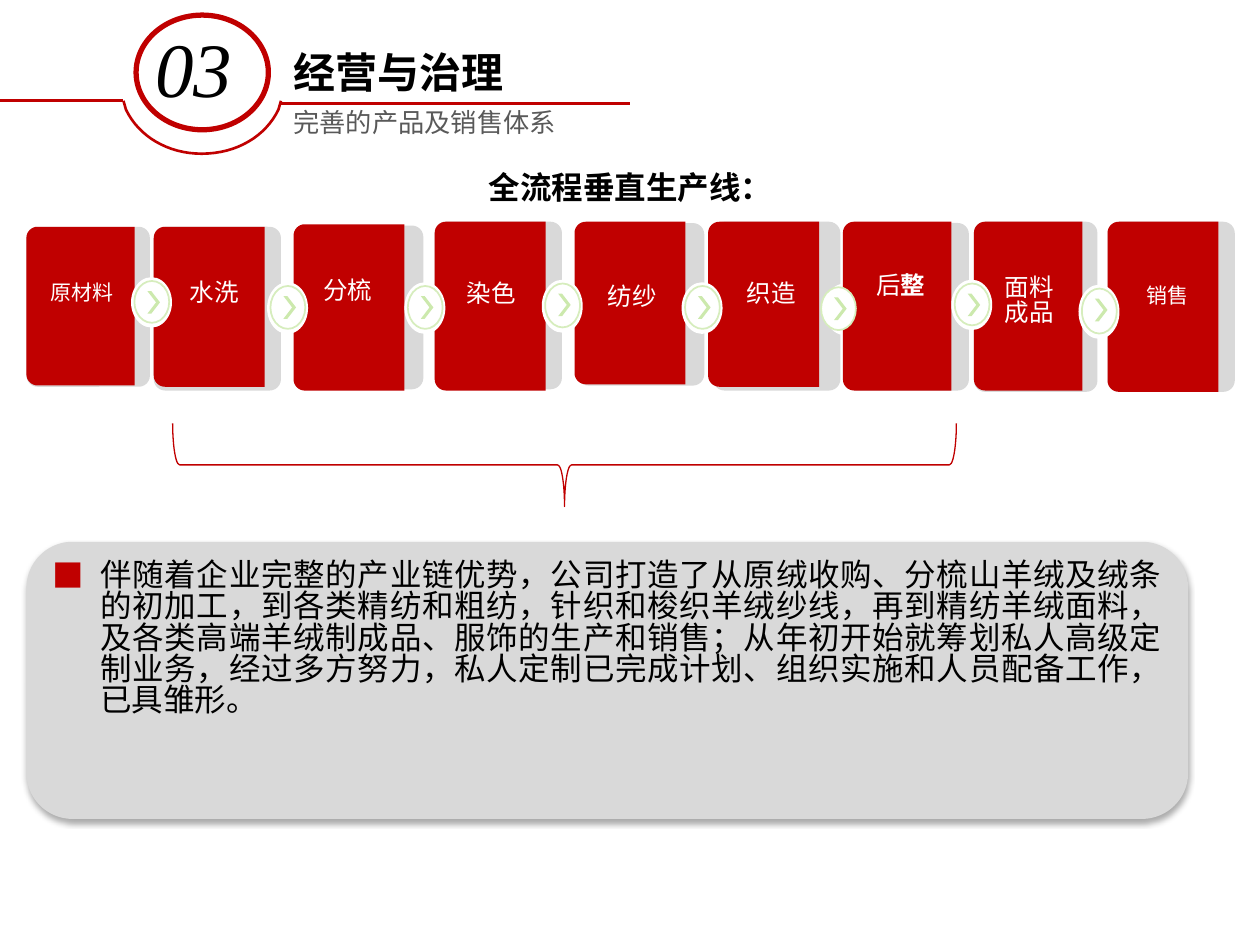
from collections import namedtuple
from dataclasses import dataclass
from lxml.etree import SubElement
from pptx import Presentation
from pptx.dml.color import RGBColor
from pptx.enum.shapes import MSO_CONNECTOR, MSO_SHAPE
from pptx.enum.text import MSO_ANCHOR, PP_ALIGN
from pptx.oxml.ns import qn
from pptx.util import Inches, Pt

Box = namedtuple("Box", "x y w h")
Stage = namedtuple("Stage", "back front label")


@dataclass(frozen=True)
class Theme:
    red: str = "C00000"
    grey: str = "D9D9D9"
    white: str = "FFFFFF"
    black: str = "000000"
    muted: str = "595959"
    ring: str = "D6EDBD"
    mark: str = "CCE9AD"
    sans: str = "Noto Sans CJK SC"
    head: str = "Montserrat"
    serif: str = "Times New Roman"
    huge: int = 44
    title: int = 24
    body: int = 18
    sub: int = 15
    card: int = 14
    small: int = 12
    lead: float = 0.83


T = Theme()
WIDE, HIGH = Inches(10), Inches(7.5)
COLS, ROWS = 100, 75


def col(n):
    return round(WIDE * n / COLS)


def row(n):
    return round(HIGH * n / ROWS)


def span(box):
    return col(box.x), row(box.y), col(box.w), row(box.h)


def inset(box, x, y, w, h):
    """Place a part, in grid units, from the corner of a box."""
    return Box(box.x + x, box.y + y, w, h)


def rgb(code):
    return RGBColor.from_string(code)


def paint(shape, fill=None, line=None, width=1):
    shape.shadow.inherit = False
    if fill:
        shape.fill.solid()
        shape.fill.fore_color.rgb = rgb(fill)
    else:
        shape.fill.background()
    if line:
        shape.line.color.rgb = rgb(line)
        shape.line.width = Pt(width)
    else:
        shape.line.fill.background()
    return shape


def form(slide, kind, box, adj=None, **look):
    shape = slide.shapes.add_shape(kind, *span(box))
    if adj is not None:
        shape.adjustments[0] = adj
    return paint(shape, **look)


def rule(slide, start, end, y):
    line = slide.shapes.add_connector(MSO_CONNECTOR.STRAIGHT, col(start), row(y), col(end), row(y))
    line.line.color.rgb = rgb(T.red)
    line.line.width = Pt(1.5)
    SubElement(line._element.spPr, qn("a:effectLst"))


def curve(a, b, c, d, steps=16):
    """Points along a cubic curve from a to d."""
    return [tuple((1 - t) ** 3 * p + 3 * (1 - t) ** 2 * t * q + 3 * (1 - t) * t * t * r + t ** 3 * s
                  for p, q, r, s in zip(a, b, c, d))
            for t in (n / steps for n in range(steps + 1))]


def trace(slide, points, close, **look):
    spots = [(col(x), row(y)) for x, y in points]
    pen = slide.shapes.build_freeform(*spots[0], scale=1.0)
    pen.add_line_segments(spots[1:], close=close)
    return paint(pen.convert_to_shape(), **look)


def write(shape, *runs, size=T.body, font=T.sans, color=T.black, bold=(), italic=False,
          align=PP_ALIGN.LEFT, anchor=MSO_ANCHOR.TOP, lead=T.lead, bullet=None, pad=None):
    """Fill a shape with one paragraph; bold lists the indexes of bold runs."""
    frame = shape.text_frame
    frame.word_wrap = True
    frame.vertical_anchor = anchor
    if pad is not None:
        frame.margin_left = frame.margin_right = frame.margin_top = frame.margin_bottom = pad
    para = frame.paragraphs[0]
    para.alignment = align
    para.line_spacing = lead
    if bullet:
        props = para._p.get_or_add_pPr()
        props.set("marL", str(col(3.8)))
        props.set("indent", str(-col(3.8)))
        tint = SubElement(props, qn("a:buClr"))
        SubElement(tint, qn("a:srgbClr"), val=T.red)
        SubElement(props, qn("a:buFont"), typeface=T.sans)
        SubElement(props, qn("a:buChar"), char=bullet)
    for n, text in enumerate(runs):
        run = para.add_run()
        run.text = text
        face = run.font
        face.size, face.name = Pt(size), font
        face.bold, face.italic = n in bold, italic
        face.color.rgb = rgb(color)
        SubElement(run._r.get_or_add_rPr(), qn("a:ea"), typeface=T.sans)


def label(slide, box, *runs, **look):
    write(slide.shapes.add_textbox(*span(box)), *runs, **look)


def header(slide, box):
    disc = form(slide, MSO_SHAPE.OVAL, inset(box, 10.8, 1.2, 10.5, 9.1), line=T.red, width=3)
    write(disc, "03", size=T.huge, font=T.serif, italic=True,
          anchor=MSO_ANCHOR.MIDDLE, lead=0.9, pad=0)
    base = box.y + 8
    rule(slide, box.x + 22.3, box.x + box.w, base + 0.2)
    left, mid, right = box.x + 9.8, box.x + 16, box.x + 22.3
    low = base + 4.2
    bowl = (curve((left + 0.2, base + 0.7), (left + 1.2, base + 2.8), (mid - 2.7, low), (mid, low))
            + curve((mid, low), (mid + 2.8, low), (right - 1.2, base + 2.8), (right - 0.2, base + 0.7)))
    trace(slide, [(left, base), *bowl, (right, base)], False, line=T.red, width=1.5)
    rule(slide, box.x, left, base)
    label(slide, inset(box, 22.3, 3.6, 28.8, 4.6), "经营与治理", size=T.title, font=T.head,
          bold=(0,), anchor=MSO_ANCHOR.BOTTOM)
    label(slide, inset(box, 22.3, 8.4, 27.7, 6.2), "完善的产品及销售体系",
          size=T.sub, font=T.serif, color=T.muted)


def card(slide, stage):
    """A grey plate under a red panel rounded on its left side."""
    form(slide, MSO_SHAPE.ROUNDED_RECTANGLE, stage.back, adj=0.09, fill=T.grey)
    x, y, w, h = stage.front
    r, k, end = 0.9, 0.4, y + h
    edge = (curve((x + r, end), (x + k, end), (x, end - k), (x, end - r), 8)
            + curve((x, y + r), (x, y + k), (x + k, y), (x + r, y), 8))
    trace(slide, [(x + w, y), (x + w, end), *edge], True, fill=T.red)
    dx, dy, runs, size, bold = stage.label
    label(slide, inset(stage.front, dx, dy - y, w - 1.4, 4.1), *runs, size=size,
          color=T.white, bold=bold, align=PP_ALIGN.CENTER)


def halo(slide, box):
    form(slide, MSO_SHAPE.OVAL, box, fill=T.white)


def badge(slide, box):
    form(slide, MSO_SHAPE.OVAL, inset(box, 0.27, 0.3, box.w * 0.85, box.h * 0.83),
         fill=T.white, line=T.ring)
    form(slide, MSO_SHAPE.CHEVRON, inset(box, 1.3, 1.1, 1, 1.8), adj=0.69, fill=T.mark)


def flow(slide, box):
    # back x, y, w, h; front x, y, w, h; label dx, y, runs, size, bold runs
    data = [
        ((2.1, 1, 9.8, 12.7), (2.1, 1, 8.6, 12.6), (0.8, 5, ["原材料"], T.small, ())),
        ((12.2, 1, 10.1, 13), (12.2, 1, 8.8, 12.7), (1.1, 4.9, ["水洗"], T.card, ())),
        ((23.5, 0.9, 10.1, 13), (23.3, 0.8, 8.8, 13.2), (0.6, 4.7, ["分梳"], T.card, ())),
        ((34.5, 0.6, 10.1, 13.3), (34.5, 0.6, 8.8, 13.4), (0.8, 5, ["染色"], T.card, ())),
        ((45.8, 0.7, 10.1, 12.9), (45.6, 0.6, 8.8, 12.9), (0.9, 5.2, ["纺纱"], T.card, ())),
        ((56.6, 0.6, 10.1, 13.4), (56.2, 0.6, 8.8, 13.1), (1.3, 5, ["织造"], T.card, ())),
        ((67.1, 0.7, 9.8, 13.3), (66.9, 0.6, 8.6, 13.4), (1, 4.3, ["后", "整"], T.card, (1,))),
        ((77.3, 0.6, 9.8, 13.5), (77.3, 0.6, 8.6, 13.4), (0.8, 4.5, ["面料成品"], T.card, ())),
        ((87.9, 0.6, 10.1, 13.5), (87.9, 0.6, 8.8, 13.5), (1.05, 5.3, ["销售"], T.small, ())),
    ]
    tucked = 6
    for n, (back, front, (dx, dy, *text)) in enumerate(data):
        if n == tucked:
            halo(slide, inset(box, 65.4, 5.5, 3.3, 4.1))
        card(slide, Stage(inset(box, *back), inset(box, *front), (dx, box.y + dy, *text)))
    joints = [(10.4, 5, 4), (21.2, 5.4, 4.1), (32.1, 5.4, 4.1), (43, 5.2, 4.2),
              (54.1, 5.4, 4.1), (64.9, 5.5, 4.1), (75.5, 5.2, 4), (85.6, 5.6, 4.3)]
    for n, (x, y, h) in enumerate(joints, 1):
        spot = inset(box, x, y, 3.25, h)
        if n != tucked:
            halo(slide, spot)
        badge(slide, spot)


def brace(slide, box):
    """A brace that opens upward; it is turned within its box."""
    mid, level = box.x + box.w / 2, box.y + box.h / 2
    turned = Box(mid - box.h / 2, level - box.w / 2, box.h, box.w)
    form(slide, MSO_SHAPE.RIGHT_BRACE, turned, line=T.red, width=0.75).rotation = 90


def note(slide, box):
    panel = form(slide, MSO_SHAPE.ROUNDED_RECTANGLE, box, fill=T.grey)
    effect = panel._element.spPr.find(qn("a:effectLst"))
    cast = SubElement(effect, qn("a:outerShdw"), blurRad=str(Pt(3.5)), dist=str(Pt(2.2)),
                      dir="5400000", algn="t", rotWithShape="0")
    tint = SubElement(cast, qn("a:srgbClr"), val=T.black)
    SubElement(tint, qn("a:alpha"), val="32000")
    write(panel, "伴随着企业完整的产业链优势，公司打造了从原绒收购、分梳山羊绒及绒条的初加工，"
          "到各类精纺和粗纺，针织和梭织羊绒纱线，再到精纺羊绒面料，及各类高端羊绒制成品、"
          "服饰的生产和销售；从年初开始就筹划私人高级定制业务，经过多方努力，"
          "私人定制已完成计划、组织实施和人员配备工作，已具雏形。",
          align=PP_ALIGN.JUSTIFY, bullet="■")


def main():
    deck = Presentation()
    deck.slide_width, deck.slide_height = WIDE, HIGH
    slide = deck.slides.add_slide(deck.slide_layouts[6])
    header(slide, Box(0, 0, 50, 15))
    strip = form(slide, MSO_SHAPE.ROUNDED_RECTANGLE, Box(4.8, 13.1, 90.5, 4.5))
    write(strip, "全流程垂直生产线：", bold=(0,), align=PP_ALIGN.CENTER)
    flow(slide, Box(0, 17, COLS, 14))
    brace(slide, Box(13.7, 33.6, 62.2, 6.6))
    note(slide, Box(2.1, 43, 92.2, 22))
    deck.save("out.pptx")


if __name__ == "__main__":
    main()
